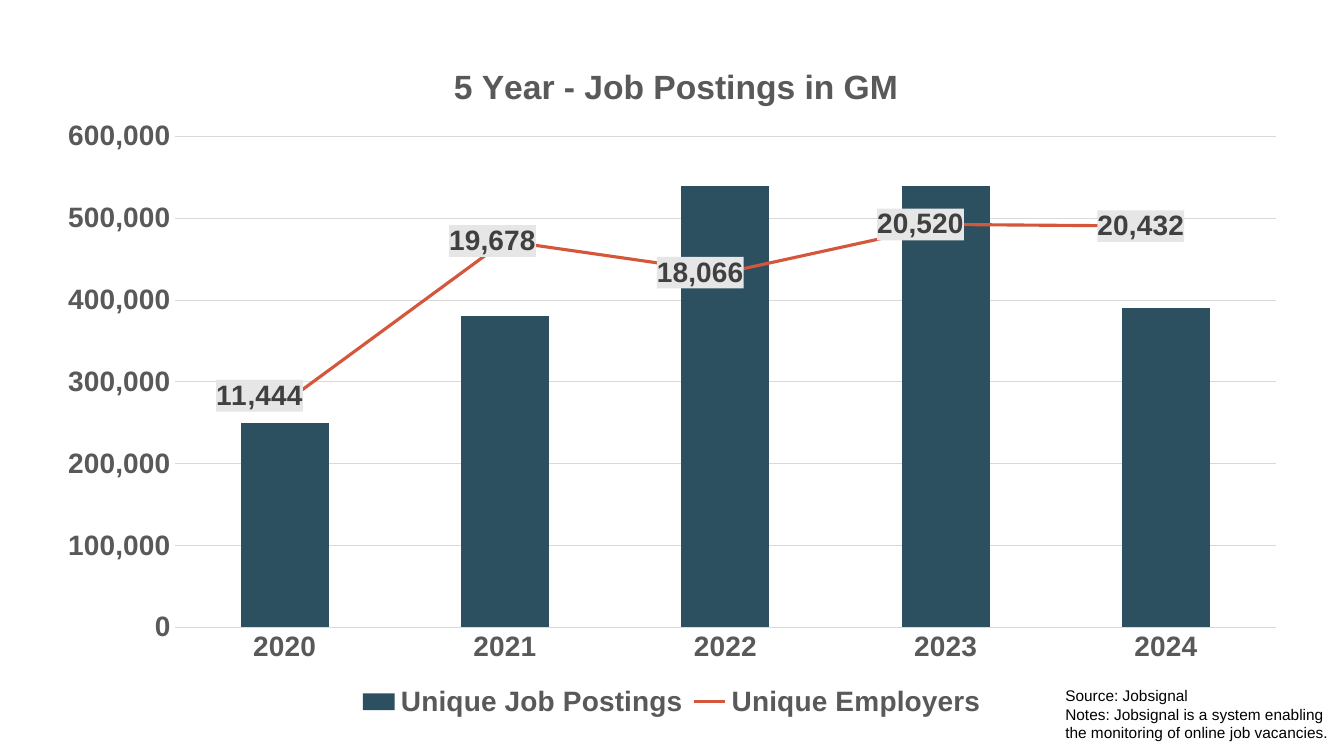
import pptx
import pptx.chart.data
import pptx.dml.color
import pptx.enum.chart
import pptx.enum.text
import pptx.oxml
import pptx.oxml.ns
import pptx.util

Pt = pptx.util.Pt
qn = pptx.oxml.ns.qn

TITLE = "5 Year - Job Postings in GM"
YEARS = ["2020", "2021", "2022", "2023", "2024"]
POSTINGS = ("Unique Job Postings", [250000, 380000, 540000, 540000, 390000])
EMPLOYERS = ("Unique Employers", [11444, 19678, 18066, 20520, 20432])
LABEL_SHIFTS = [(-0.02, -0.01), (-0.01, 0), (-0.02, 0), (-0.02, 0), (-0.02, 0)]
NOTES = [
    "Source: Jobsignal",
    "Notes: Jobsignal is a system enabling the monitoring of online job vacancies.",
]

THEME = {
    "font": "Arial",
    "text": "595959",
    "label": "404040",
    "label_fill": "E7E6E6",
    "note": "000000",
    "grid": "D9D9D9",
    "bar": "2C5060",
    "line": "D5573B",
    "title_size": 24,
    "chart_size": 20,
    "note_size": 11,
}

CHART_BOX = (30.24, 20.88, 899.28, 497.52)
NOTE_BOX = (753.84, 486.72, 205.92, 47.52)
PLOT_LAYOUT = {"x": 0.105, "y": 0.154, "w": 0.875, "h": 0.705}
TITLE_LAYOUT = {"x": 0.322, "y": 0.042}
LEGEND_LAYOUT = {"x": 0.246, "y": 0.943, "w": 0.508, "h": 0.057}
POSTINGS_MAX, POSTINGS_STEP, EMPLOYERS_MAX = 600000, 100000, 25000

NS = (
    'xmlns:c="http://schemas.openxmlformats.org/drawingml/2006/chart" '
    'xmlns:a="http://schemas.openxmlformats.org/drawingml/2006/main"'
)


def rgb(name):
    return pptx.dml.color.RGBColor.from_string(THEME[name])


def style_font(font, size, color, bold):
    font.name = THEME["font"]
    font.size = Pt(THEME[size])
    font.color.rgb = rgb(color)
    font.bold = bold


def style_line(line, color, width):
    line.color.rgb = rgb(color)
    line.width = Pt(width)


def remove_all(element, tag):
    for old in element.findall(qn(tag)):
        element.remove(old)


def layout_xml(box, inner=False):
    target = '<c:layoutTarget val="inner"/>' if inner else ""
    modes = "".join(f'<c:{k}Mode val="edge"/>' for k in "xy")
    sizes = "".join(f'<c:{k} val="{v}"/>' for k, v in box.items())
    return f"<c:layout {NS}><c:manualLayout>{target}{modes}{sizes}</c:manualLayout></c:layout>"


def place(element, index, box, inner=False):
    remove_all(element, "c:layout")
    element.insert(index, pptx.oxml.parse_xml(layout_xml(box, inner)))


def labels_xml():
    size = THEME["chart_size"] * 100
    body = (
        '<c:numFmt formatCode="#,##0" sourceLinked="0"/>'
        f'<c:spPr><a:solidFill><a:srgbClr val="{THEME["label_fill"]}"/></a:solidFill>'
        "<a:ln><a:noFill/></a:ln></c:spPr>"
        f'<c:txPr><a:bodyPr/><a:p><a:pPr><a:defRPr sz="{size}" b="1">'
        f'<a:solidFill><a:srgbClr val="{THEME["label"]}"/></a:solidFill>'
        f'<a:latin typeface="{THEME["font"]}"/></a:defRPr></a:pPr>'
        '<a:endParaRPr lang="en-GB"/></a:p></c:txPr><c:dLblPos val="ctr"/>'
        '<c:showLegendKey val="0"/><c:showVal val="1"/><c:showCatName val="0"/>'
        '<c:showSerName val="0"/><c:showPercent val="0"/><c:showBubbleSize val="0"/>'
    )
    points = "".join(
        f'<c:dLbl><c:idx val="{i}"/><c:layout><c:manualLayout><c:x val="{x}"/>'
        f'<c:y val="{y}"/></c:manualLayout></c:layout>{body}</c:dLbl>'
        for i, (x, y) in enumerate(LABEL_SHIFTS)
    )
    return f"<c:dLbls {NS}>{points}{body}</c:dLbls>"


def axis_xml(tag, axis_id, cross_id, hidden, pos, top, tail):
    return (
        f'<c:{tag} {NS}><c:axId val="{axis_id}"/><c:scaling>'
        f'<c:orientation val="minMax"/>{top}</c:scaling><c:delete val="{hidden}"/>'
        f'<c:axPos val="{pos}"/><c:majorTickMark val="out"/><c:minorTickMark val="none"/>'
        '<c:tickLblPos val="none"/><c:spPr><a:ln><a:noFill/></a:ln></c:spPr>'
        f'<c:crossAx val="{cross_id}"/>{tail}</c:{tag}>'
    )


def move_to_line(chart):
    bars = chart.plots[0]
    area = chart.value_axis._element.getparent()
    ser = bars.series[1]._element
    remove_all(ser, "c:invertIfNegative")
    ser.find(qn("c:cat")).addprevious(pptx.oxml.parse_xml(labels_xml()))
    line = pptx.oxml.parse_xml(
        f'<c:lineChart {NS}><c:grouping val="standard"/><c:varyColors val="0"/>'
        '<c:marker val="1"/><c:axId val="50010"/><c:axId val="50020"/></c:lineChart>'
    )
    line.insert(2, ser)
    area.find(qn("c:barChart")).addnext(line)
    top = f'<c:max val="{EMPLOYERS_MAX}"/><c:min val="0"/>'
    value = axis_xml("valAx", 50020, 50010, 0, "r", top, '<c:crosses val="max"/>')
    category = axis_xml("catAx", 50010, 50020, 1, "b", "", '<c:crosses val="autoZero"/>')
    last = area.findall(qn("c:valAx"))[-1]
    for xml in (category, value):
        last.addnext(pptx.oxml.parse_xml(xml))
    place(area, 0, PLOT_LAYOUT, True)


def add_postings_chart(slide):
    data = pptx.chart.data.CategoryChartData(number_format="#,##0")
    data.categories = YEARS
    for name, values in (POSTINGS, EMPLOYERS):
        data.add_series(name, values)
    kinds = pptx.enum.chart
    chart = slide.shapes.add_chart(
        kinds.XL_CHART_TYPE.COLUMN_CLUSTERED, *map(Pt, CHART_BOX), data
    ).chart
    style_font(chart.font, "chart_size", "text", True)

    chart.has_title = True
    r = chart.chart_title.text_frame.paragraphs[0].add_run()
    r.text = TITLE
    style_font(r.font, "title_size", "text", True)
    place(chart.chart_title._element, 1, TITLE_LAYOUT)

    chart.has_legend = True
    chart.legend.position = kinds.XL_LEGEND_POSITION.BOTTOM
    chart.legend.include_in_layout = False
    style_font(chart.legend.font, "chart_size", "text", True)
    place(chart.legend._element, 1, LEGEND_LAYOUT)

    years, amounts = chart.category_axis, chart.value_axis
    for axis in (years, amounts):
        axis.major_tick_mark = kinds.XL_TICK_MARK.NONE
        style_font(axis.tick_labels.font, "chart_size", "text", True)
    style_line(years.format.line, "grid", 0.75)
    amounts.format.line.fill.background()
    amounts.minimum_scale = 0
    amounts.maximum_scale = POSTINGS_MAX
    amounts.major_unit = POSTINGS_STEP
    amounts.tick_labels.number_format = "#,##0"
    amounts.tick_labels.number_format_is_linked = False
    style_line(amounts.major_gridlines.format.line, "grid", 0.75)

    move_to_line(chart)
    bars, line = chart.plots
    bars.gap_width = 150
    bars.vary_by_categories = False
    bars.series[0].format.fill.solid()
    bars.series[0].format.fill.fore_color.rgb = rgb("bar")
    employers = line.series[0]
    employers.smooth = False
    employers.marker.style = kinds.XL_MARKER_STYLE.NONE
    style_line(employers.format.line, "line", 2.25)


def add_notes(slide):
    tf = slide.shapes.add_textbox(*map(Pt, NOTE_BOX)).text_frame
    tf.word_wrap = True
    tf.auto_size = pptx.enum.text.MSO_AUTO_SIZE.SHAPE_TO_FIT_TEXT
    for i, text in enumerate(NOTES):
        p = tf.add_paragraph() if i else tf.paragraphs[0]
        r = p.add_run()
        r.text = text
        style_font(r.font, "note_size", "note", False)


def main():
    prs = pptx.Presentation()
    prs.slide_width, prs.slide_height = Pt(960), Pt(540)
    slide = prs.slides.add_slide(prs.slide_layouts[6])
    add_postings_chart(slide)
    add_notes(slide)
    prs.save("out.pptx")


if __name__ == "__main__":
    main()
